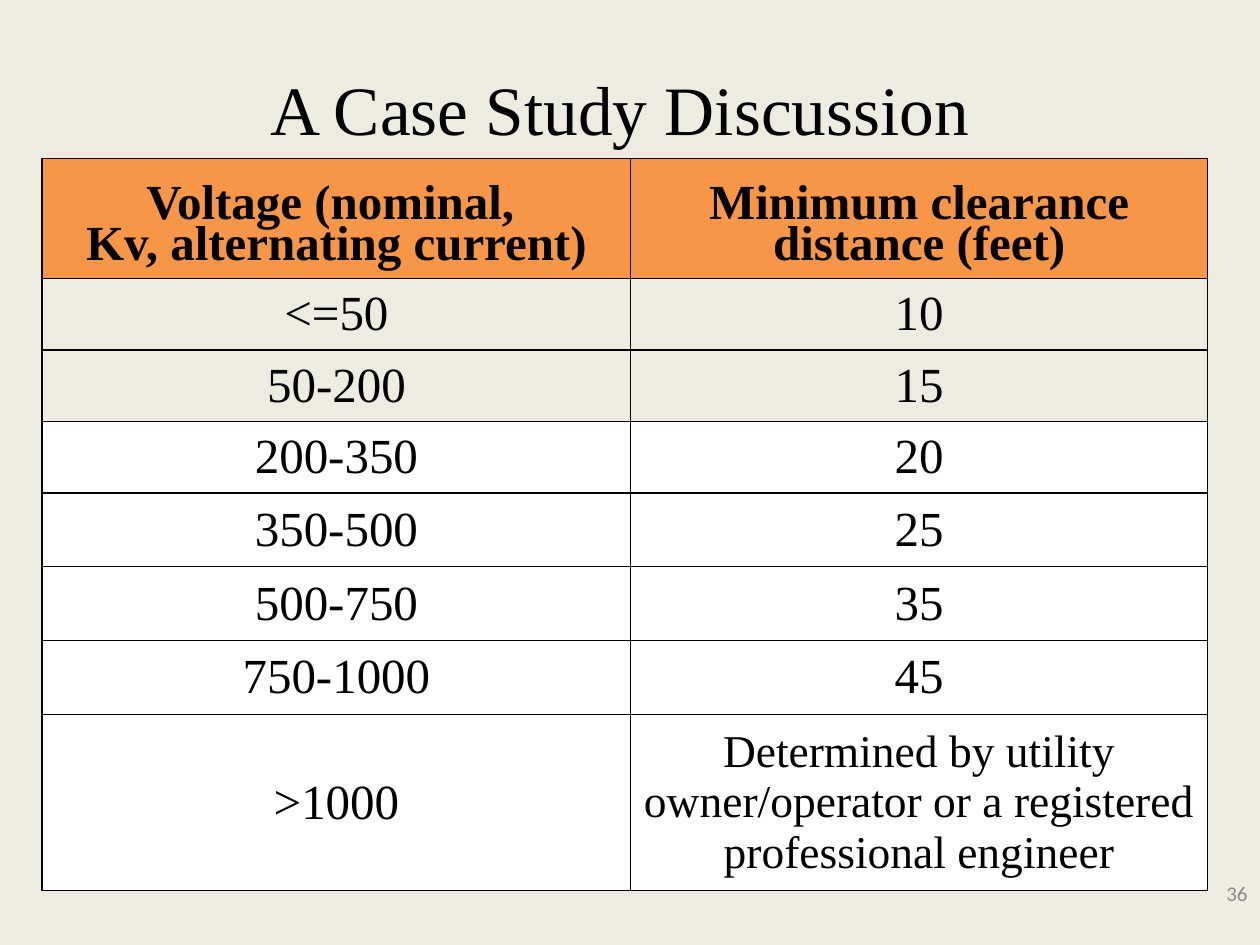
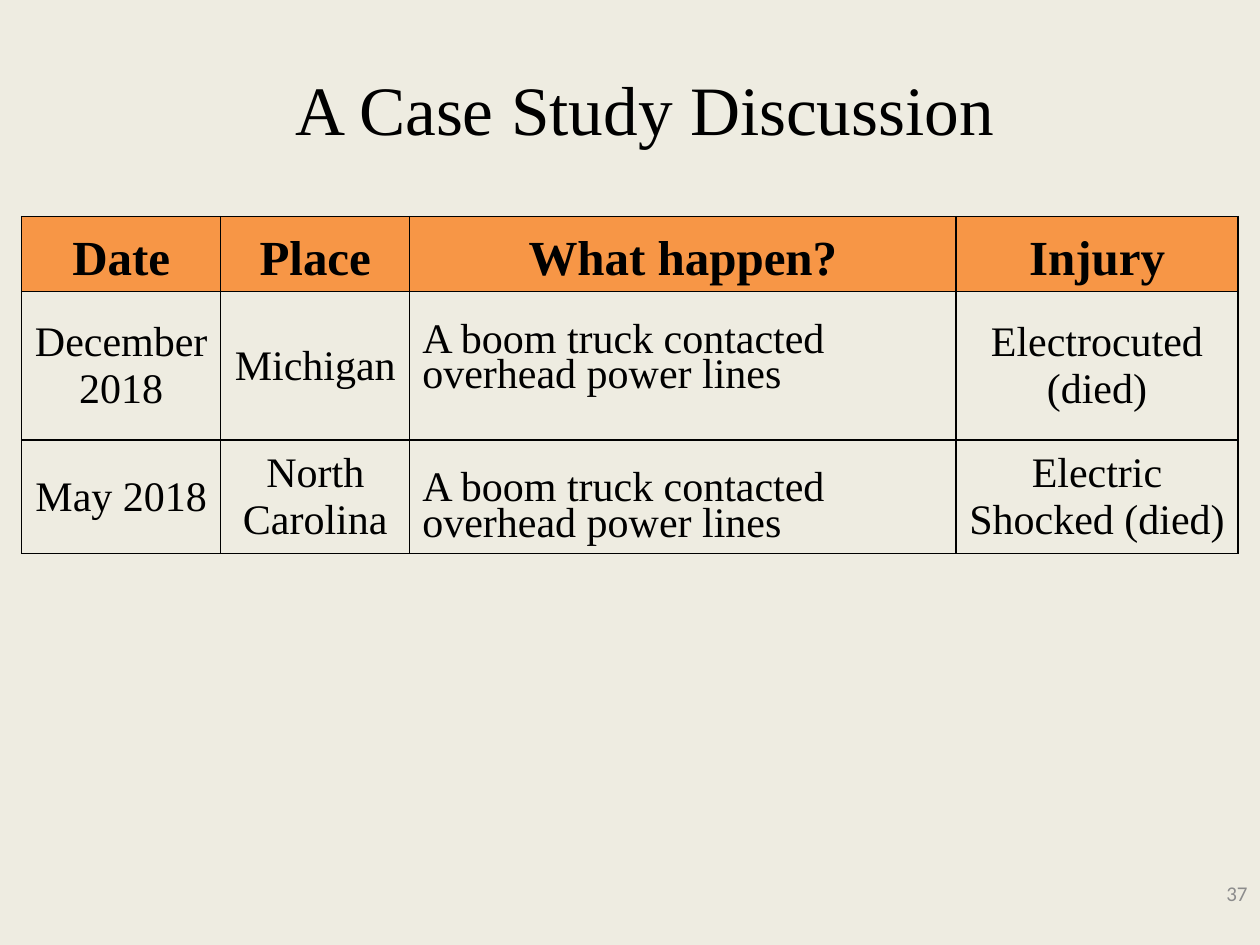
from lxml.etree import SubElement
from pptx import Presentation
from pptx.dml.color import RGBColor
from pptx.enum.text import MSO_ANCHOR, PP_ALIGN
from pptx.oxml.ns import qn
from pptx.util import Inches, Pt

WIDTH, HEIGHT = Inches(10), Inches(7.5)
COLUMN, ROW = WIDTH / 100, HEIGHT / 75
PAPER, INK, ORANGE, WHITE, GREY = "EEECE1", "000000", "F79646", "FFFFFF", "8C8C8C"
SERIF, SANS = "Times New Roman", "Calibri"
TITLE = "A Case Study Discussion"

TITLE_STYLE = dict(size=39.6)
NUMBER_STYLE = dict(size=12, font=SANS, color=GREY, align=PP_ALIGN.RIGHT)
HEADER = dict(size=28, bold=True, spacing=0.76, top=1.9, fill=ORANGE)
PLAIN = dict(size=28)
FILLED = dict(size=28, fill=WHITE)
NOTE = dict(size=26, fill=WHITE)
CASE = dict(size=24)
EVENT = dict(size=24, align=PP_ALIGN.LEFT, spacing=0.76, top=2.4)
RAISED_EVENT = dict(EVENT, bottom=3.3)


def across(columns):
    return round(columns * COLUMN)


def down(rows):
    return round(rows * ROW)


def rgb(code):
    return RGBColor.from_string(code)


def apply(target, values):
    for name, value in values.items():
        setattr(target, name, value)


def write(frame, text, size, font=SERIF, color=INK, bold=False,
          align=PP_ALIGN.CENTER, spacing=1.0):
    for index, line in enumerate(text.split("\n")):
        para = frame.add_paragraph() if index else frame.paragraphs[0]
        apply(para, dict(alignment=align, line_spacing=spacing,
                         space_before=Pt(0), space_after=Pt(0)))
        span = para.add_run()
        span.text = line
        apply(span.font, dict(name=font, size=Pt(size), bold=bold))
        span.font.color.rgb = rgb(color)


def place(box, left, top, width, height):
    apply(box, dict(left=across(left), top=down(top),
                    width=across(width), height=down(height)))


def add_page(deck, number, left_inset=1, right_inset=1):
    page = deck.slides.add_slide(deck.slide_layouts[5])
    title = page.shapes.title
    place(title, 5, 5.42, 90, 6.2)
    apply(title.text_frame, dict(
        word_wrap=True, vertical_anchor=MSO_ANCHOR.MIDDLE,
        margin_left=across(left_inset), margin_right=across(right_inset)))
    write(title.text_frame, TITLE, **TITLE_STYLE)
    box = page.shapes.add_textbox(across(77.5), down(68.9), across(22.5), down(4))
    apply(box.text_frame, dict(word_wrap=True, vertical_anchor=MSO_ANCHOR.MIDDLE))
    write(box.text_frame, str(number), **NUMBER_STYLE)
    return page


def add_borders(cell):
    properties = cell._tc.get_or_add_tcPr()
    for side in ("lnL", "lnR", "lnT", "lnB"):
        line = SubElement(properties, qn(f"a:{side}"), w=str(Pt(1)))
        solid = SubElement(line, qn("a:solidFill"))
        SubElement(solid, qn("a:srgbClr"), val=INK)


def fill_cell(cell, text, style):
    style = dict(style)
    fill = style.pop("fill", None)
    apply(cell, dict(vertical_anchor=MSO_ANCHOR.MIDDLE,
                     margin_left=across(1), margin_right=across(1),
                     margin_top=down(style.pop("top", 0.5)),
                     margin_bottom=down(style.pop("bottom", 0.5))))
    add_borders(cell)
    if fill:
        cell.fill.solid()
        cell.fill.fore_color.rgb = rgb(fill)
    else:
        cell.fill.background()
    write(cell.text_frame, text, **style)


def add_grid(page, left, top, height, widths, row_heights, texts, styles):
    holder = page.shapes.add_table(
        len(row_heights), len(widths), across(left), down(top),
        across(sum(widths)), down(height))
    table = holder.table
    apply(table, dict(first_row=False, horz_banding=False))
    for column, width in zip(table.columns, widths):
        column.width = across(width)
    for row, row_height, row_texts, row_styles in zip(
            table.rows, row_heights, texts, styles):
        row.height = down(row_height)
        for cell, text, style in zip(row.cells, row_texts, row_styles):
            fill_cell(cell, text, style)
    holder.height = down(height)


def add_clearance_page(deck):
    page = add_page(deck, 36, right_inset=2.6)
    texts = [
        ("Voltage (nominal, \nKv, alternating current)",
         "Minimum clearance distance (feet)"),
        ("<=50", "10"),
        ("50-200", "15"),
        ("200-350", "20"),
        ("350-500", "25"),
        ("500-750", "35"),
        ("750-1000", "45"),
        (">1000", "Determined by utility owner/operator or a registered "
                  "professional engineer"),
    ]
    styles = [[HEADER] * 2] + [[PLAIN] * 2] * 2 + [[FILLED] * 2] * 4 + [[FILLED, NOTE]]
    row_heights = [8.2] + [4.7] * 3 + [5.86] * 4
    add_grid(page, 3.35, 12.6, 58, [46.7, 45.8], row_heights, texts, styles)


def add_accident_page(deck):
    page = add_page(deck, 37, left_inset=3.4)
    event = "A boom truck contacted overhead power lines"
    texts = [
        ("Date", "Place", "What happen?", "Injury"),
        ("December 2018", "Michigan", event, "Electrocuted (died)"),
        ("May 2018", "North\nCarolina", event, "Electric Shocked (died)"),
    ]
    styles = [[HEADER] * 4, [CASE, CASE, RAISED_EVENT, CASE], [CASE, CASE, EVENT, CASE]]
    add_grid(page, 1.72, 17.2, 26.9, [15.8, 15, 43.35, 22.4], [5.9, 7, 7], texts, styles)


def main():
    deck = Presentation()
    apply(deck, dict(slide_width=WIDTH, slide_height=HEIGHT))
    background = deck.slide_master.background.fill
    background.solid()
    background.fore_color.rgb = rgb(PAPER)
    add_clearance_page(deck)
    add_accident_page(deck)
    deck.save("out.pptx")


if __name__ == "__main__":
    main()
